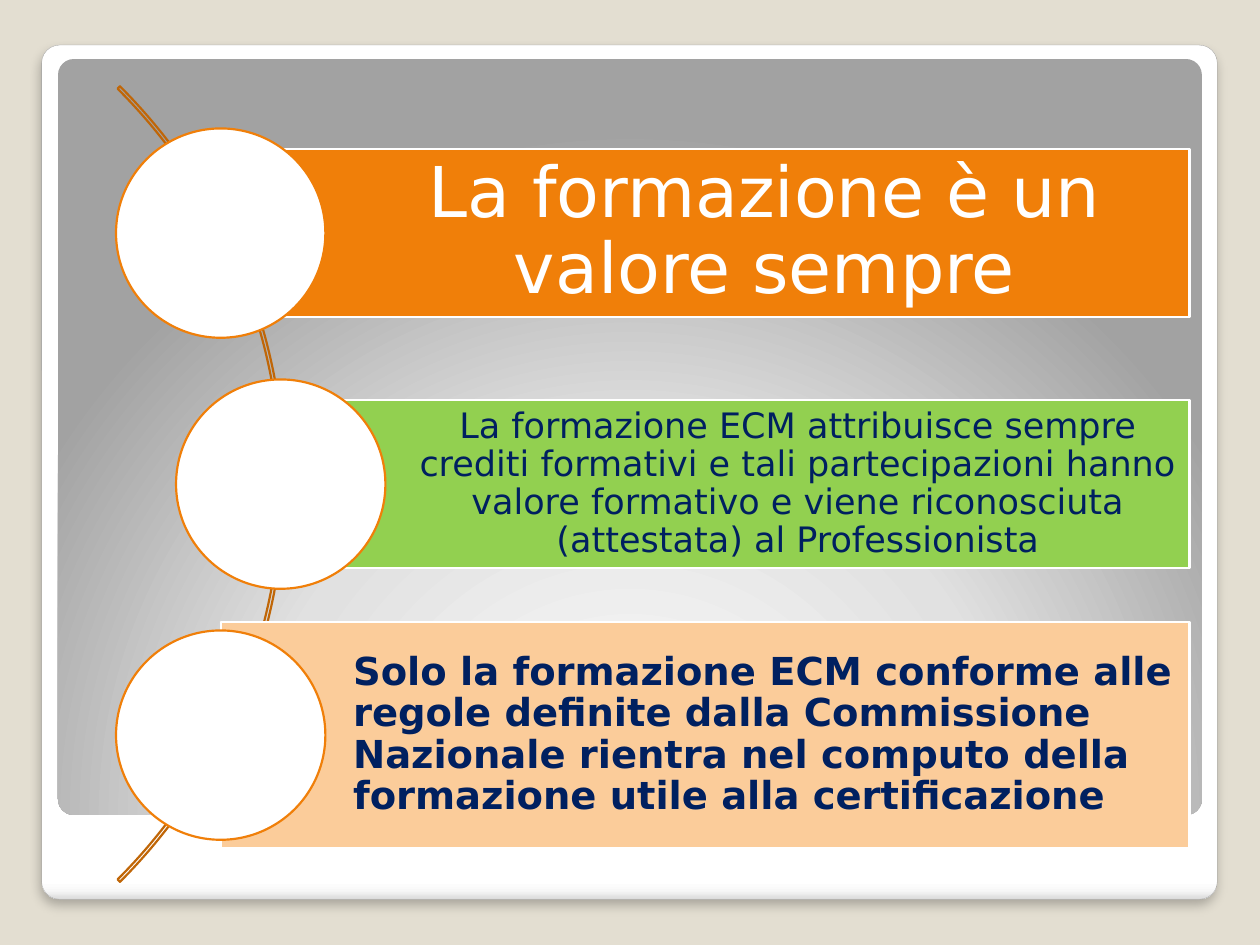
from lxml import etree
from pptx import Presentation
from pptx.dml.color import RGBColor
from pptx.enum.shapes import MSO_SHAPE
from pptx.enum.text import MSO_ANCHOR, PP_ALIGN
from pptx.oxml import parse_xml
from pptx.oxml.ns import nsdecls, qn
from pptx.util import Cm, Pt

RECTANGLE, ROUNDED = MSO_SHAPE.RECTANGLE, MSO_SHAPE.ROUNDED_RECTANGLE
OVAL, BLOCK_ARC = MSO_SHAPE.OVAL, MSO_SHAPE.BLOCK_ARC
MIDDLE = MSO_ANCHOR.MIDDLE
LEFT, CENTER = PP_ALIGN.LEFT, PP_ALIGN.CENTER

SAND = RGBColor(0xE3, 0xDE, 0xD1)
WHITE = RGBColor(0xFF, 0xFF, 0xFF)
GRAY = RGBColor(0xA4, 0xA4, 0xA4)
ORANGE = RGBColor(0xF0, 0x7F, 0x09)
DARK_ORANGE = RGBColor(0xC0, 0x66, 0x07)
GREEN = RGBColor(0x92, 0xD0, 0x50)
PEACH = RGBColor(0xFB, 0xCC, 0x9A)
NAVY = RGBColor(0x00, 0x20, 0x60)

FONT = "DejaVu Sans"
BAR_RIGHT = 23.98
DIAMETER = 4.22
FIRST_CENTER, PITCH = 4.7, 5.06
ARC_SIZE, ARC_LEFT = 22.68, -16.94

LINEAR = '<a:lin ang="5400000" scaled="0"/>'
RADIAL = ('<a:path path="circle"><a:fillToRect l="50000" t="175000" '
          'r="50000" b="-75000"/></a:path>')

MESSAGES = [
    # centre x, bar height, bar colour, text, size, colour, bold, alignment, inset
    (4.45, 3.38, ORANGE, "La formazione è un valore sempre",
     40, WHITE, False, CENTER, 0.28),
    (5.66, 3.38, GREEN,
     "La formazione ECM attribuisce sempre crediti formativi e tali "
     "partecipazioni hanno valore formativo e viene riconosciuta "
     "(attestata) al Professionista",
     20, NAVY, False, CENTER, 0.14),
    (4.45, 4.57, PEACH,
     "Solo la formazione ECM conforme alle regole definite dalla "
     "Commissione Nazionale rientra nel computo della formazione utile "
     "alla certificazione",
     22, NAVY, True, LEFT, 0.14),
][:]


def add_outline(slide, kind, left, top, width, height, line=None, weight=1.25):
    """Add a shadowless preset shape, placed in centimetres, and style its line."""
    shape = slide.shapes.add_shape(kind, Cm(left), Cm(top), Cm(width), Cm(height))
    shape.shadow.inherit = False
    if line is None:
        shape.line.fill.background()
    else:
        shape.line.color.rgb = line
        shape.line.width = Pt(weight)
    return shape


def fill_solid(shape, color):
    """Fill a shape with one colour."""
    shape.fill.solid()
    shape.fill.fore_color.rgb = color


def fill_gradient(shape, stops, direction):
    """Fill a shape with a gradient of (percent, colour) stops."""
    marks = "".join(f'<a:gs pos="{percent * 1000}"><a:srgbClr val="{color}"/></a:gs>'
                    for percent, color in stops)
    gradient = parse_xml(f'<a:gradFill {nsdecls("a")} rotWithShape="1">'
                         f'<a:gsLst>{marks}</a:gsLst>{direction}</a:gradFill>')
    shape.element.spPr.find(qn("a:prstGeom")).addnext(gradient)


def add_shadow(shape):
    """Drop a soft shadow below a shape."""
    effects = shape.element.spPr.find(qn("a:effectLst"))
    shadow = etree.SubElement(effects, qn("a:outerShdw"), blurRad=str(Pt(6)),
                              dist=str(Pt(4)), dir="5400000", algn="tl")
    color = etree.SubElement(shadow, qn("a:srgbClr"), val="000000")
    etree.SubElement(color, qn("a:alpha"), val="25000")


def add_frame(slide):
    """Add the white card and the grey panel behind the messages."""
    card = add_outline(slide, ROUNDED, 0.84, 0.91, 23.7, 17.22, GRAY, 0.16)
    fill_gradient(card, [(0, "FFFFFF"), (98, "FFFFFF"), (99, "F7F7F7"),
                         (100, "DADADA")], LINEAR)
    add_shadow(card)
    panel = add_outline(slide, ROUNDED, 1.17, 1.19, 23.06, 15.24)
    fill_gradient(panel, [(0, "FFFFFF"), (55, "E1E1E1"), (100, "A2A2A2")], RADIAL)
    for plate in (card, panel):
        plate.adjustments[0] = 0.021


def add_arc(slide):
    """Add the thin arc that links the circles."""
    top = FIRST_CENTER + PITCH - ARC_SIZE / 2
    arc = add_outline(slide, BLOCK_ARC, ARC_LEFT, top, ARC_SIZE, ARC_SIZE, DARK_ORANGE)
    arc.fill.background()
    for index, value in enumerate((189, 27, 0.003)):
        arc.adjustments[index] = value


def add_message(slide, center_y, center_x, height, bar_color, text, size,
                text_color, bold, alignment, inset):
    """Add a text bar with the circle that covers its left end."""
    bar = add_outline(slide, RECTANGLE, center_x, center_y - height / 2,
                      BAR_RIGHT - center_x, height, WHITE)
    fill_solid(bar, bar_color)
    frame = bar.text_frame
    frame.word_wrap = True
    frame.vertical_anchor = MIDDLE
    frame.margin_left = Cm(2.67)
    frame.margin_top = frame.margin_right = frame.margin_bottom = Cm(inset)
    paragraph = frame.paragraphs[0]
    paragraph.text = text
    paragraph.alignment = alignment
    paragraph.line_spacing = 0.9
    paragraph.font.name = FONT
    paragraph.font.size = Pt(size)
    paragraph.font.bold = bold
    paragraph.font.color.rgb = text_color
    circle = add_outline(slide, OVAL, center_x - DIAMETER / 2,
                         center_y - DIAMETER / 2, DIAMETER, DIAMETER, ORANGE)
    fill_solid(circle, WHITE)


def main():
    """Build the slide and save it."""
    deck = Presentation()
    deck.slide_width, deck.slide_height = Cm(25.4), Cm(19.05)
    slide = deck.slides.add_slide(deck.slide_layouts[6])
    fill_solid(slide.background, SAND)
    add_frame(slide)
    add_arc(slide)
    for row, message in enumerate(MESSAGES):
        add_message(slide, FIRST_CENTER + row * PITCH, *message)
    deck.save("out.pptx")


if __name__ == "__main__":
    main()
